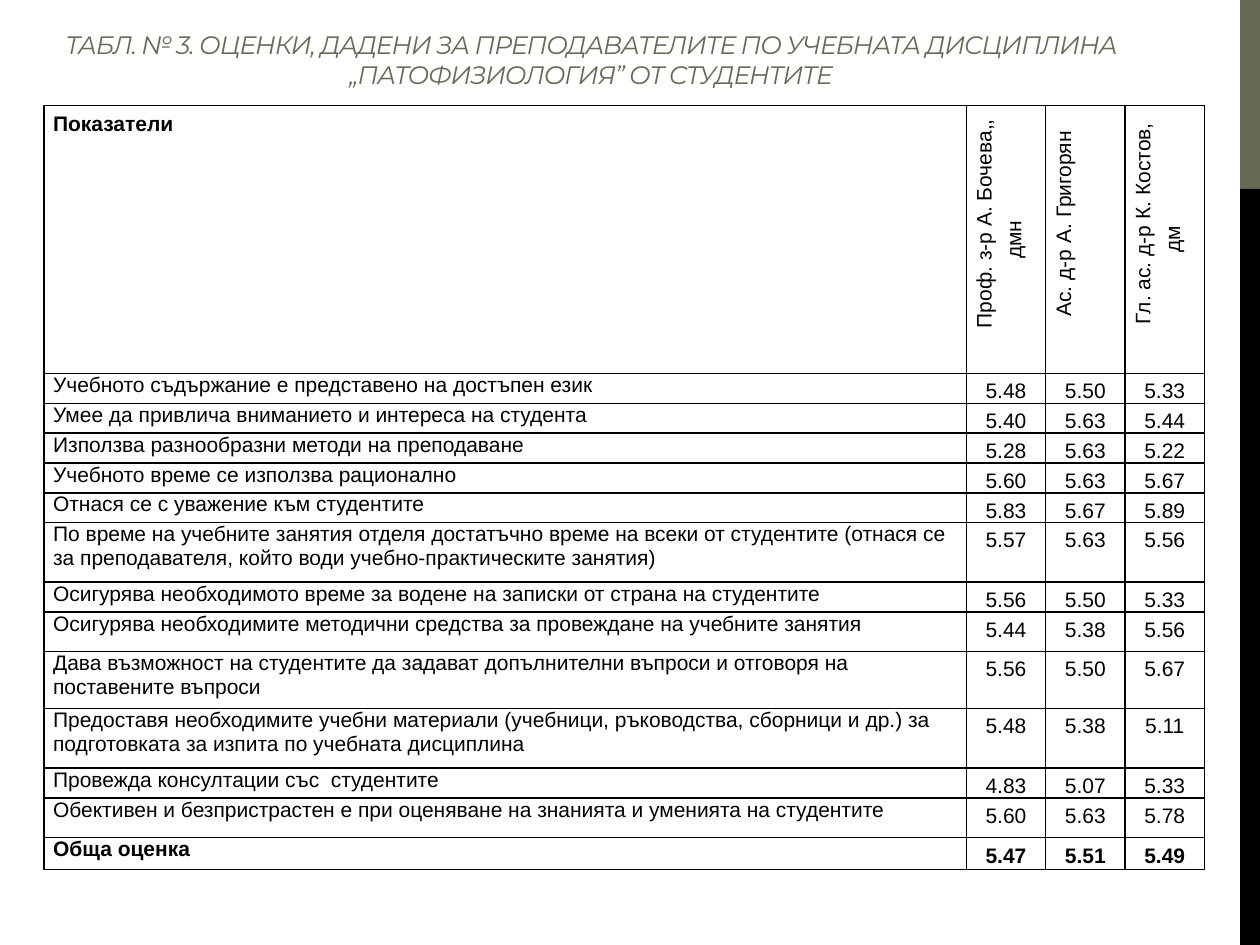
from lxml.etree import SubElement
from pptx import Presentation
from pptx.dml.color import RGBColor
from pptx.enum.shapes import MSO_SHAPE
from pptx.enum.text import MSO_ANCHOR, PP_ALIGN
from pptx.oxml.ns import qn
from pptx.util import Cm, Pt

COLORS = {"olive": "676A55", "black": "000000"}

TITLE = ("ТАБЛ. № 3. ОЦЕНКИ, ДАДЕНИ ЗА ПРЕПОДАВАТЕЛИТЕ ПО УЧЕБНАТА ДИСЦИПЛИНА "
         "„ПАТОФИЗИОЛОГИЯ” ОТ СТУДЕНТИТЕ")

HEADER = ("Показатели", "Проф. з-р А. Бочева,, дмн", "Ас. д-р А. Григорян",
          "Гл. ас. д-р К. Костов, дм")
HEADER_HEIGHT = 5.4
COL_WIDTHS = (18.59, 1.6, 1.6, 1.6)

# Row height in cm, indicator, one score per teacher
RATINGS = [
    (0.6, "Учебното съдържание е представено на достъпен език", "5.48", "5.50", "5.33"),
    (0.6, "Умее да привлича вниманието и интереса на студента", "5.40", "5.63", "5.44"),
    (0.6, "Използва разнообразни методи на преподаване", "5.28", "5.63", "5.22"),
    (0.6, "Учебното време се използва рационално", "5.60", "5.63", "5.67"),
    (0.6, "Отнася се с уважение към студентите", "5.83", "5.67", "5.89"),
    (1.2, "По време на учебните занятия отделя достатъчно време на всеки от студентите "
          "(отнася се за преподавателя, който води учебно-практическите занятия)",
     "5.57", "5.63", "5.56"),
    (0.6, "Осигурява необходимото време за водене на записки от страна на студентите",
     "5.56", "5.50", "5.33"),
    (0.8, "Осигурява необходимите методични средства за провеждане на учебните занятия",
     "5.44", "5.38", "5.56"),
    (1.15, "Дава възможност на студентите да задават допълнителни въпроси и отговоря на "
           "поставените въпроси", "5.56", "5.50", "5.67"),
    (1.2, "Предоставя необходимите учебни материали (учебници, ръководства, сборници и др.) "
          "за подготовката за изпита по учебната дисциплина", "5.48", "5.38", "5.11"),
    (0.6, "Провежда консултации със  студентите", "4.83", "5.07", "5.33"),
    (0.8, "Обективен и безпристрастен е при оценяване на знанията и уменията на студентите",
     "5.60", "5.63", "5.78"),
    (0.64, "Обща оценка", "5.47", "5.51", "5.49"),
]

TITLE_FONT = {"name": "Montserrat", "size": Pt(14.4), "italic": True}
CELL_FONT = {"name": "Arial", "size": Pt(12)}
CELL_MARGINS = {"margin_left": Cm(0.18), "margin_right": Cm(0.18),
                "margin_top": 0, "margin_bottom": 0}


def apply(obj, values):
    for name, value in values.items():
        setattr(obj, name, value)


def write(p, text, color, font, para):
    r = p.add_run()
    r.text = text
    apply(r.font, font)
    r.font.color.rgb = RGBColor.from_string(COLORS[color])
    apply(p, para)
    return r


def add_bar(s, color, top, height):
    sp = s.shapes.add_shape(MSO_SHAPE.RECTANGLE, Cm(25), Cm(top), Cm(0.4), Cm(height))
    sp.shadow.inherit = False
    sp.fill.solid()
    sp.fill.fore_color.rgb = RGBColor.from_string(COLORS[color])
    sp.line.fill.background()


def add_title(s):
    tf = s.shapes.add_textbox(Cm(0.51), Cm(0.53), Cm(22.81), Cm(1.4)).text_frame
    apply(tf, {"word_wrap": True, "vertical_anchor": MSO_ANCHOR.BOTTOM})
    r = write(tf.paragraphs[0], TITLE, "olive", TITLE_FONT, {"alignment": PP_ALIGN.CENTER})
    r.font._element.set("spc", "-60")


def set_borders(cell):
    tc_pr = cell._tc.get_or_add_tcPr()
    for side in ("a:lnL", "a:lnR", "a:lnT", "a:lnB"):
        ln = SubElement(tc_pr, qn(side), w=str(Pt(1)))
        fill = SubElement(ln, qn("a:solidFill"))
        SubElement(fill, qn("a:srgbClr"), val=COLORS["black"])


def fill_cell(cell, text, bold, para):
    apply(cell, CELL_MARGINS)
    set_borders(cell)
    cell.fill.background()
    write(cell.text_frame.paragraphs[0], text, "black", {**CELL_FONT, "bold": bold}, para)


def add_ratings_table(s):
    rows = [(HEADER_HEIGHT, *HEADER), *RATINGS]
    heights = [row[0] for row in rows]
    table = s.shapes.add_table(len(rows), len(COL_WIDTHS), Cm(0.89), Cm(2.13),
                               Cm(sum(COL_WIDTHS)), Cm(sum(heights))).table
    apply(table, {"first_row": False, "horz_banding": False})
    for col, width in zip(table.columns, COL_WIDTHS):
        col.width = Cm(width)

    score = {"alignment": PP_ALIGN.CENTER, "line_spacing": Pt(17)}
    heading = {"alignment": PP_ALIGN.JUSTIFY, "line_spacing": Pt(17)}
    last = len(rows) - 1
    for i, (height, *texts) in enumerate(rows):
        table.rows[i].height = Cm(height)
        for j, text in enumerate(texts):
            cell = table.cell(i, j)
            para = score if j else heading if i == 0 else {"alignment": PP_ALIGN.LEFT}
            fill_cell(cell, text, i == last or (i == 0 and j == 0), para)
            # Teacher names run upwards
            if i == 0 and j:
                cell._tc.tcPr.set("vert", "vert270")
                p_pr = cell.text_frame.paragraphs[0]._p.get_or_add_pPr()
                p_pr.set("indent", str(Cm(0.64)))


def main():
    prs = Presentation()
    apply(prs, {"slide_width": Cm(25.4), "slide_height": Cm(19.05)})
    s = prs.slides.add_slide(prs.slide_layouts[6])

    # Side band
    add_bar(s, "olive", 0, 3.81)
    add_bar(s, "black", 3.81, 15.24)

    # Title and ratings
    add_title(s)
    add_ratings_table(s)

    prs.save("out.pptx")


if __name__ == "__main__":
    main()
